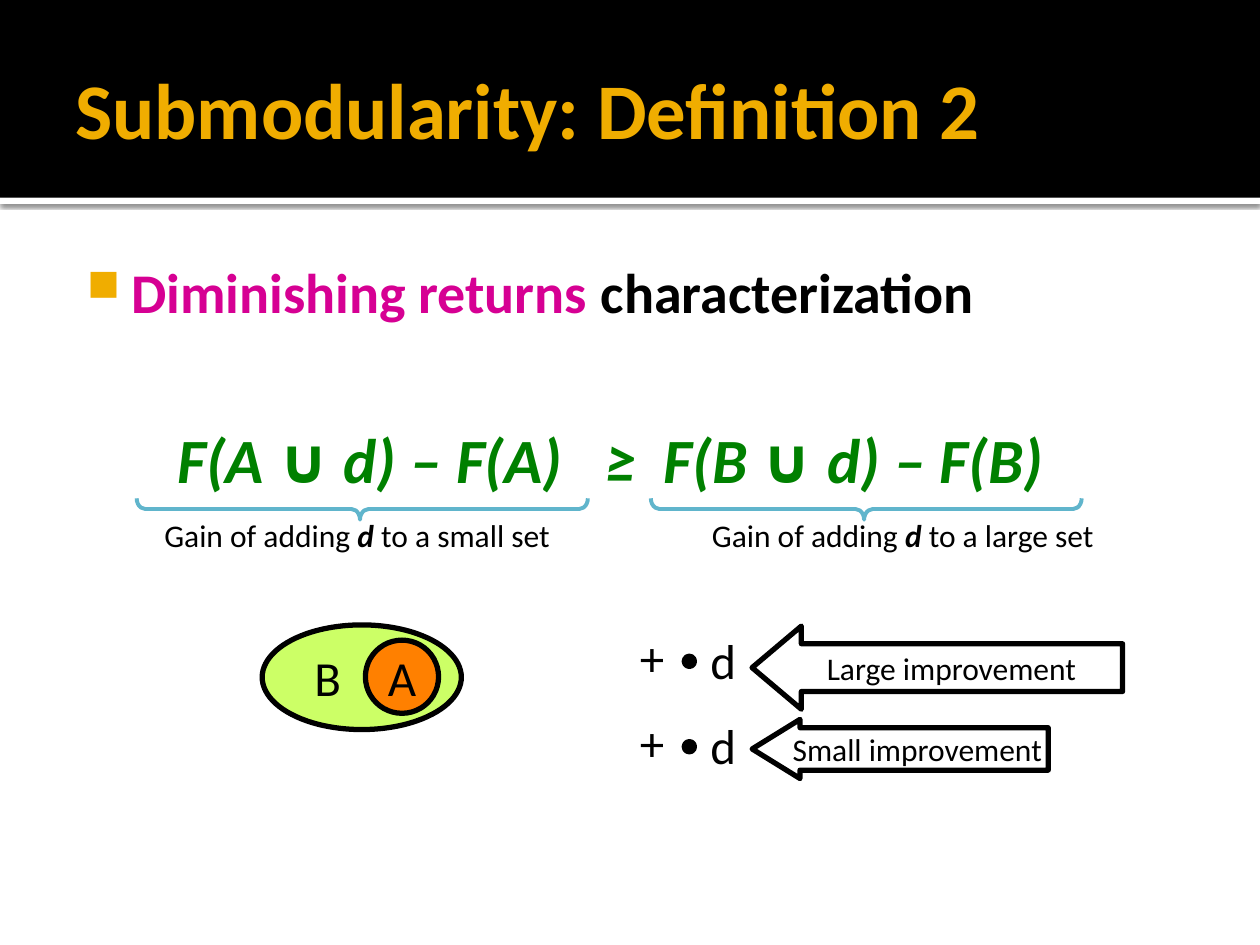
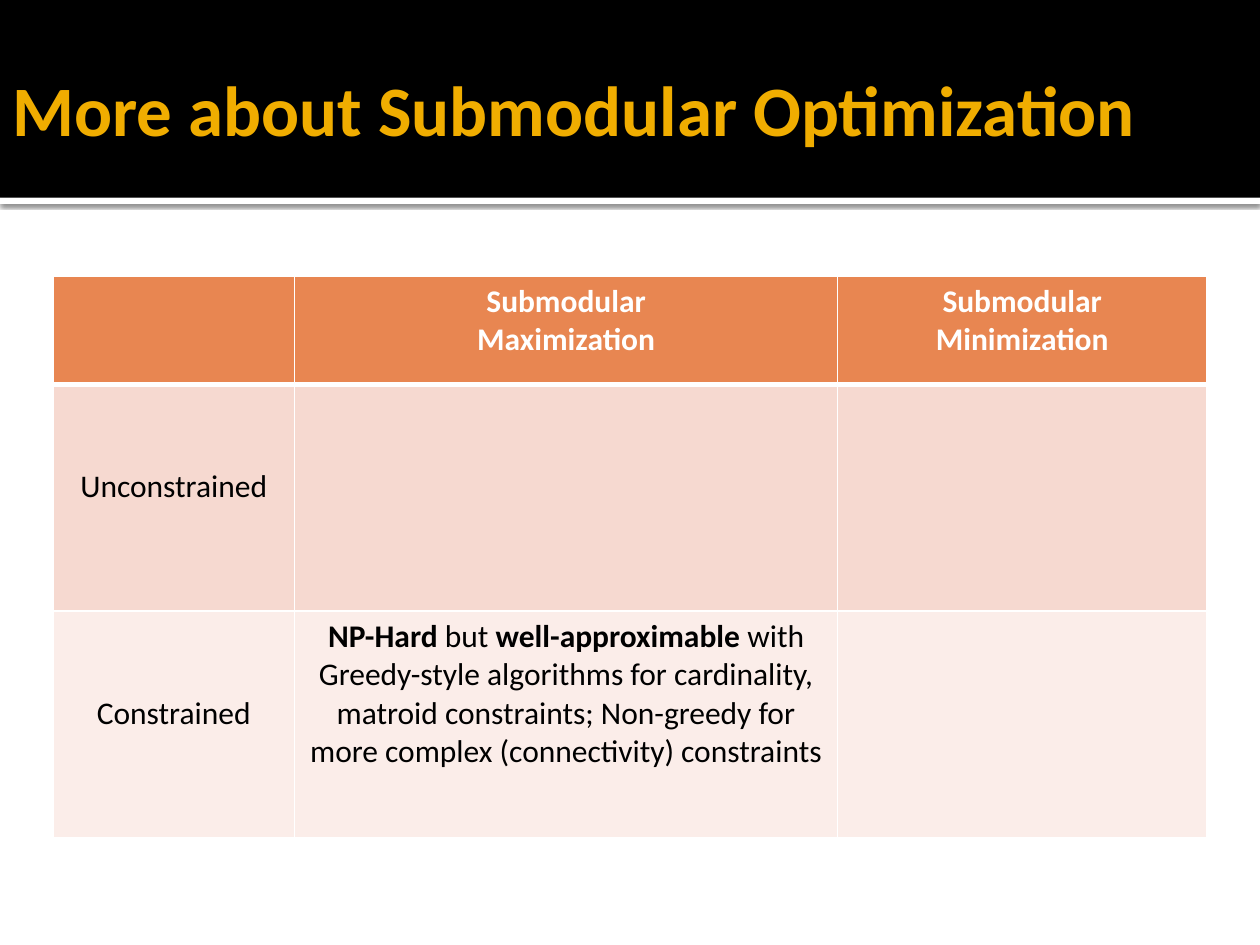
from lxml.etree import SubElement
from pptx import Presentation
from pptx.dml.color import RGBColor
from pptx.enum.shapes import MSO_SHAPE
from pptx.enum.text import MSO_ANCHOR, PP_ALIGN
from pptx.oxml import parse_xml
from pptx.oxml.ns import nsdecls, qn
from pptx.util import Pt

FONT = "Calibri"
BLACK, WHITE, GOLD = "000000", "FFFFFF", "F0AD00"
MAGENTA, GREEN, TEAL = "D60093", "008000", "60B5CC"
LIME, ORANGE = "CCFF66", "FF8000"
ROW_FILLS = ["E88651", "F6D9D0", "FBEDE9"]
INSETS = (7.2, 3.6, 7.2, 3.6)


def rgb(hex_string):
    """Turn a hex string into a colour."""
    return RGBColor.from_string(hex_string)


def points(*values):
    """Turn numbers into lengths in points."""
    return [Pt(value) for value in values]


class SlideBuilder:
    """Hold the deck's style and draw elements on the current slide."""

    def __init__(self):
        """Open an empty deck."""
        self.deck = Presentation()
        self.deck.slide_width, self.deck.slide_height = points(720, 540)
        self.page = None

    def new_page(self, title, size, left):
        """Start a slide with the shared bands and a title."""
        self.page = self.deck.slides.add_slide(self.deck.slide_layouts[6])
        stripe = self.shape(MSO_SHAPE.RECTANGLE, (0, 113, 720, 3.6), fill=WHITE)
        shadow = SubElement(stripe._element.spPr.find(qn("a:effectLst")), qn("a:outerShdw"),
                            blurRad=str(Pt(2.5)), dist=str(Pt(0.8)), dir="5400000")
        tint = SubElement(shadow, qn("a:srgbClr"), val=BLACK)
        SubElement(tint, qn("a:alpha"), val="60000")
        self.shape(MSO_SHAPE.RECTANGLE, (0, 0, 720, 113), fill=BLACK)
        self.text((left, 12.25, 720 - 2 * left, 98.6), [(title, "b")], size, GOLD,
                  align=PP_ALIGN.LEFT, anchor=MSO_ANCHOR.MIDDLE, insets=(7.2, 3.6, 3.6, 3.6))

    def add_spans(self, para, spans, size, color, align=PP_ALIGN.CENTER):
        """Fill a paragraph with (text, style[, colour]) spans."""
        para.alignment = align
        for text, style, *own_color in spans:
            span = para.add_run()
            span.text = text
            span.font.name, span.font.size = FONT, Pt(size)
            span.font.bold, span.font.italic = "b" in style, "i" in style
            span.font.color.rgb = rgb(own_color[0] if own_color else color)

    def fit(self, frame, anchor, insets, wrap):
        """Set the anchor, insets and wrapping of a text frame."""
        frame.word_wrap, frame.vertical_anchor = wrap, anchor
        (frame.margin_left, frame.margin_top,
         frame.margin_right, frame.margin_bottom) = points(*insets)

    def text(self, place, spans, size, color=BLACK, align=PP_ALIGN.CENTER,
             anchor=MSO_ANCHOR.TOP, insets=INSETS, wrap=True):
        """Add a text box and return its paragraph."""
        box = self.page.shapes.add_textbox(*points(*place))
        self.fit(box.text_frame, anchor, insets, wrap)
        para = box.text_frame.paragraphs[0]
        self.add_spans(para, spans, size, color, align)
        return para

    def bullet(self, place, spans, size):
        """Add a text box with one square-bulleted paragraph."""
        para = self.text(place, spans, size, align=PP_ALIGN.LEFT, insets=(4.3, 7.2, 7.2, 3.6))
        props = para._p.get_or_add_pPr()
        props.set("marL", str(Pt(34.6)))
        props.set("indent", str(Pt(-25.2)))
        SubElement(SubElement(props, qn("a:buClr")), qn("a:srgbClr"), val=GOLD)
        SubElement(props, qn("a:buSzPct"), val="80000")
        SubElement(props, qn("a:buChar"), char="■")

    def formula(self, place, text, stops, indent):
        """Add a formula whose parts are set apart by tab stops."""
        para = self.text(place, [(text, "bi")], 36, GREEN, align=PP_ALIGN.LEFT,
                         insets=(indent, 3.6, 7.2, 3.6))
        tabs = SubElement(para._p.get_or_add_pPr(), qn("a:tabLst"))
        for stop in stops:
            SubElement(tabs, qn("a:tab"), pos=str(Pt(stop)), algn="l")

    def shape(self, kind, place, fill=None, line=None, width=3, adjust=(), turn=0):
        """Add a preset shape."""
        shape = self.page.shapes.add_shape(kind, *points(*place))
        shape.shadow.inherit = False
        shape.rotation = turn
        for index, value in enumerate(adjust):
            shape.adjustments[index] = value
        if fill:
            shape.fill.solid()
            shape.fill.fore_color.rgb = rgb(fill)
        else:
            shape.fill.background()
        if line:
            shape.line.color.rgb, shape.line.width = rgb(line), Pt(width)
        else:
            shape.line.fill.background()
        return shape

    def label(self, shape, text, size, insets=INSETS, wrap=False):
        """Put centred text inside a shape."""
        self.fit(shape.text_frame, MSO_ANCHOR.MIDDLE, insets, wrap)
        self.add_spans(shape.text_frame.paragraphs[0], [(text, "")], size, BLACK)

    def table(self, left, top, widths, heights, cells):
        """Add a table; cells maps (row, column) to paragraphs of spans."""
        place = points(left, top, sum(widths), sum(heights))
        grid = self.page.shapes.add_table(len(heights), len(widths), *place).table
        grid.first_row = grid.horz_banding = False
        for column, width in zip(grid.columns, widths):
            column.width = Pt(width)
        for r, height in enumerate(heights):
            grid.rows[r].height = Pt(height)
            for c in range(len(widths)):
                self.cell(grid.cell(r, c), r, c, cells.get((r, c), []))

    def cell(self, cell, r, c, lines):
        """Style and fill one table cell."""
        cell.fill.solid()
        cell.fill.fore_color.rgb = rgb(ROW_FILLS[r])
        if r and c == 0:
            cell.margin_top = Pt(47.5)
        cell.text_frame.text = "\n" * (len(lines) - 1)
        for para, spans in zip(cell.text_frame.paragraphs, lines):
            self.add_spans(para, spans, 18, BLACK if r else WHITE)
        props = cell._tc.get_or_add_tcPr()
        for index, side in enumerate(["lnL", "lnR", "lnT", "lnB"]):
            width = 3 if (r, side) in [(0, "lnB"), (1, "lnT")] else 1
            props.insert(index, parse_xml(
                f'<a:{side} {nsdecls("a")} w="{Pt(width)}"><a:solidFill>'
                f'<a:srgbClr val="{WHITE}"/></a:solidFill></a:{side}>'))


def definition_slide(show):
    """Draw the diminishing-returns definition."""
    show.new_page("Submodularity: Definition 2", 45, 36)
    show.bullet((36, 139.7, 648, 364.3),
                [("Diminishing returns ", "b", MAGENTA), ("characterization", "b")], 32)

    big_set = show.shape(MSO_SHAPE.OVAL, (149.8, 357.1, 113.8, 59.8), LIME, BLACK)
    show.label(big_set, "B", 28, insets=(7.2, 3.6, 46, 3.6), wrap=True)
    small_set = show.shape(MSO_SHAPE.OVAL, (208.8, 365.8, 41.8, 41.8), ORANGE, BLACK)
    show.label(small_set, "A", 28)

    improvements = [("Large improvement", (429.8, 357.8, 211.7, 47.5), (0.575, 0.593)),
                    ("Small improvement", (429.8, 411.1, 169.2, 33.8), (0.717, 0.81))]
    for row, (text, place, adjust) in enumerate(improvements):
        drop = 48.8 * row
        show.text((358.2, 355 + drop, 28.8, 41), [("+", "")], 28, wrap=False)
        show.shape(MSO_SHAPE.OVAL, (391, 375 + drop, 5.8, 5.8), BLACK, BLACK)
        show.text((398.5, 356.5 + drop, 29.5, 41), [("d", "")], 28, wrap=False)
        arrow = show.shape(MSO_SHAPE.LEFT_ARROW, place, line=BLACK, adjust=adjust)
        show.label(arrow, text, 18)

    show.formula((77.8, 236.9, 599.8, 51.1), "F(A ∪ d) – F(A)\t≥\tF(B ∪ d) – F(B)",
                 stops=(244.5, 278), indent=23.5)
    gains = [("small", 48.2, 311.8, 207, 257.8), ("large", 365.8, 300.2, 495, 246.2)]
    for size, left, width, middle, span in gains:
        show.text((left, 291.6, width, 28.8),
                  [("Gain of adding ", ""), ("d ", "bi"), (f"to a {size} set", "")], 18)
        show.shape(MSO_SHAPE.RIGHT_BRACE, (middle - 6.1, 290.9 - span / 2, 12.2, span),
                   line=TEAL, width=2.25, adjust=(0.402, 0.505), turn=90)


def optimization_slide(show):
    """Draw the table of optimization problems."""
    show.new_page("More about Submodular Optimization", 40.5, 0)
    show.table(30.2, 157.7, (138.2, 310.3, 211), (61.9, 129.6, 129.6), {
        (0, 1): [[("Submodular", "b")], [("Maximization", "b")]],
        (0, 2): [[("Submodular", "b")], [("Minimization", "b")]],
        (1, 0): [[("Unconstrained", "")]],
        (2, 0): [[("Constrained", "")]],
        (2, 1): [[("NP-Hard ", "b"), ("but ", ""), ("well-approximable ", "b"),
                  ("with Greedy-style algorithms for cardinality, matroid constraints; "
                   "Non-greedy for more complex (connectivity) constraints", "")]],
    })


def main():
    """Build and save the deck."""
    show = SlideBuilder()
    definition_slide(show)
    optimization_slide(show)
    show.deck.save("out.pptx")


if __name__ == "__main__":
    main()
